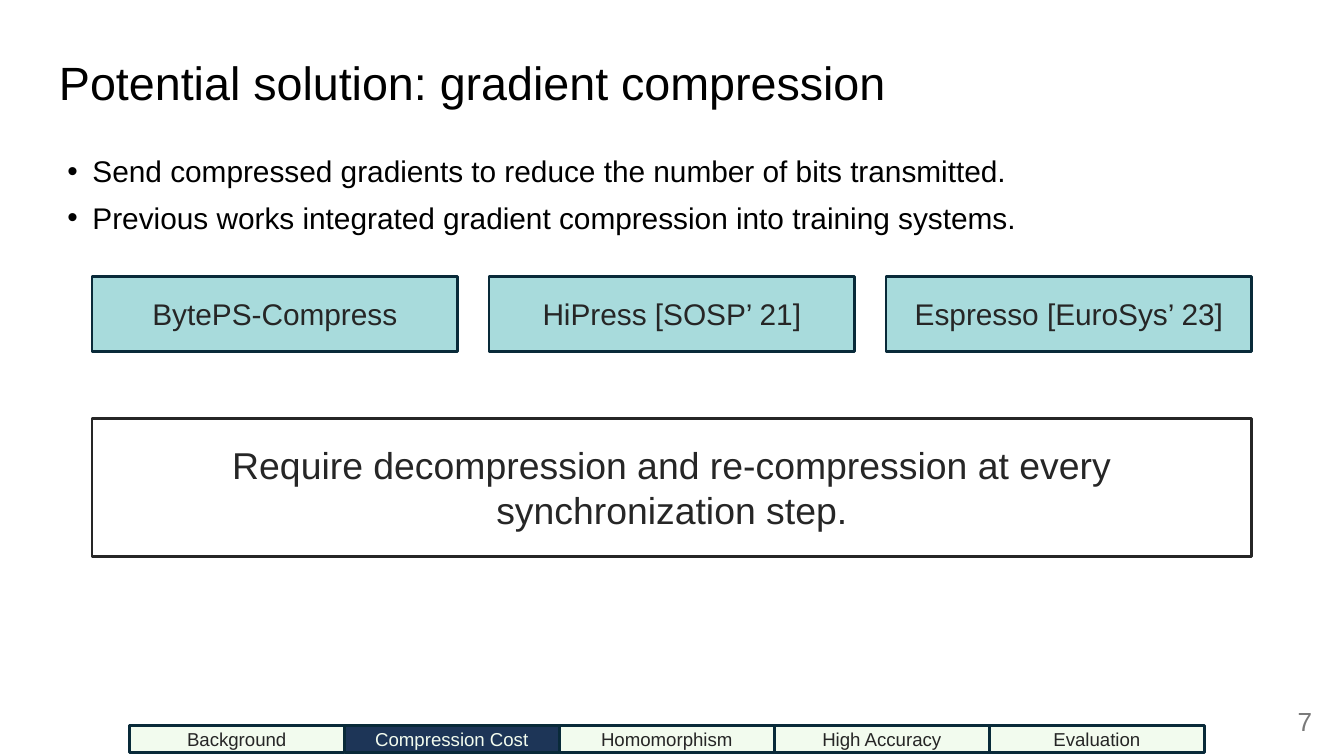
"""Build the gradient compression slide with its section navigation bar."""
from dataclasses import dataclass

from lxml.etree import SubElement
from pptx import Presentation
from pptx.dml.color import RGBColor
from pptx.enum.shapes import MSO_SHAPE
from pptx.enum.text import MSO_ANCHOR, PP_ALIGN
from pptx.oxml.ns import qn
from pptx.shapes.autoshape import Shape
from pptx.slide import Slide
from pptx.util import Pt

BLACK = RGBColor(0x00, 0x00, 0x00)
WHITE = RGBColor(0xFF, 0xFF, 0xFF)
CHARCOAL = RGBColor(0x26, 0x26, 0x26)
GREY = RGBColor(0x79, 0x79, 0x79)
TEAL = RGBColor(0xA8, 0xDB, 0xDC)
DARK_TEAL = RGBColor(0x09, 0x2A, 0x39)
NAVY = RGBColor(0x1D, 0x35, 0x57)
MINT = RGBColor(0xF2, 0xFB, 0xEE)

FONT = "Arial"
SYSTEMS = ("BytePS-Compress", "HiPress [SOSP’ 21]", "Espresso [EuroSys’ 23]")
SECTIONS = ("Background", "Compression Cost", "Homomorphism", "High Accuracy", "Evaluation")
CURRENT_SECTION = "Compression Cost"
BULLETS = (
    "Send compressed gradients to reduce the number of bits transmitted.",
    "Previous works integrated gradient compression into training systems.",
)


@dataclass(frozen=True)
class Area:
    left: float
    top: float
    width: float
    height: float

    def column(self, index: int, pitch: float) -> "Area":
        return Area(self.left + index * pitch, self.top, self.width, self.height)


@dataclass(frozen=True)
class TextStyle:
    size: float
    color: RGBColor
    alignment: PP_ALIGN = PP_ALIGN.LEFT
    anchor: MSO_ANCHOR = MSO_ANCHOR.TOP


@dataclass(frozen=True)
class BoxStyle:
    fill: RGBColor
    line: RGBColor
    text: TextStyle


def centred(size: float, color: RGBColor) -> TextStyle:
    return TextStyle(size, color, PP_ALIGN.CENTER, MSO_ANCHOR.MIDDLE)


SYSTEM_STYLE = BoxStyle(TEAL, DARK_TEAL, centred(16, CHARCOAL))
MESSAGE_STYLE = BoxStyle(WHITE, CHARCOAL, centred(20, CHARCOAL))
SECTION_STYLE = BoxStyle(MINT, DARK_TEAL, centred(10, CHARCOAL))
CURRENT_STYLE = BoxStyle(NAVY, DARK_TEAL, centred(10, MINT))

FIRST_SYSTEM = Area(49.3, 148.2, 196, 40)
SYSTEM_PITCH = 212.7
FIRST_SECTION = Area(69.2, 388.8, 115.2, 14.4)


def write(shape: Shape, text: str, style: TextStyle) -> None:
    frame = shape.text_frame
    frame.word_wrap = True
    frame.vertical_anchor = style.anchor
    frame.text = text
    for paragraph in frame.paragraphs:
        paragraph.alignment = style.alignment
        for run in paragraph.runs:
            run.font.name = FONT
            run.font.size = Pt(style.size)
            run.font.color.rgb = style.color


def add_box(slide: Slide, area: Area, text: str, style: BoxStyle) -> Shape:
    shape = slide.shapes.add_shape(
        MSO_SHAPE.RECTANGLE, Pt(area.left), Pt(area.top), Pt(area.width), Pt(area.height)
    )
    shape.shadow.inherit = False
    shape.fill.solid()
    shape.fill.fore_color.rgb = style.fill
    shape.line.color.rgb = style.line
    shape.line.width = Pt(1.5)
    write(shape, text, style.text)
    return shape


def add_text(slide: Slide, area: Area, text: str, style: TextStyle) -> Shape:
    shape = slide.shapes.add_textbox(
        Pt(area.left), Pt(area.top), Pt(area.width), Pt(area.height)
    )
    write(shape, text, style)
    return shape


def add_bullets(slide: Slide, area: Area, lines: tuple[str, ...], style: TextStyle) -> None:
    shape = add_text(slide, area, "\n".join(lines), style)
    for paragraph in shape.text_frame.paragraphs:
        paragraph.line_spacing = 0.9
        paragraph.space_before = Pt(7.5)
        properties = paragraph._p.get_or_add_pPr()
        properties.set("marL", str(Pt(13.5)))
        properties.set("indent", str(Pt(-13.5)))
        SubElement(properties, qn("a:buFont")).set("typeface", FONT)
        SubElement(properties, qn("a:buChar")).set("char", "•")


def add_title(slide: Slide, text: str) -> None:
    shape = add_text(slide, Area(24.5, 25.2, 671, 45.4), text, TextStyle(25, BLACK))
    frame = shape.text_frame
    frame.margin_top = frame.margin_bottom = Pt(7.2)
    frame.paragraphs[0].line_spacing = 0.9


def main() -> None:
    presentation = Presentation()
    presentation.slide_width, presentation.slide_height = Pt(720), Pt(405)
    slide = presentation.slides.add_slide(presentation.slide_layouts[6])

    for index, system in enumerate(SYSTEMS):
        add_box(slide, FIRST_SYSTEM.column(index, SYSTEM_PITCH), system, SYSTEM_STYLE)
    add_text(slide, Area(548, 375.4, 162, 21.6), "7",
             TextStyle(14, GREY, PP_ALIGN.RIGHT, MSO_ANCHOR.MIDDLE))
    add_box(slide, Area(49.3, 224.1, 621.4, 74.1),
            "Require decompression and re-compression at every synchronization step.",
            MESSAGE_STYLE)
    add_bullets(slide, Area(29, 80.6, 662, 66.2), BULLETS, TextStyle(16, BLACK))
    add_title(slide, "Potential solution: gradient compression")
    for index, section in enumerate(SECTIONS):
        style = CURRENT_STYLE if section == CURRENT_SECTION else SECTION_STYLE
        add_box(slide, FIRST_SECTION.column(index, FIRST_SECTION.width), section, style)

    presentation.save("out.pptx")


if __name__ == "__main__":
    main()
